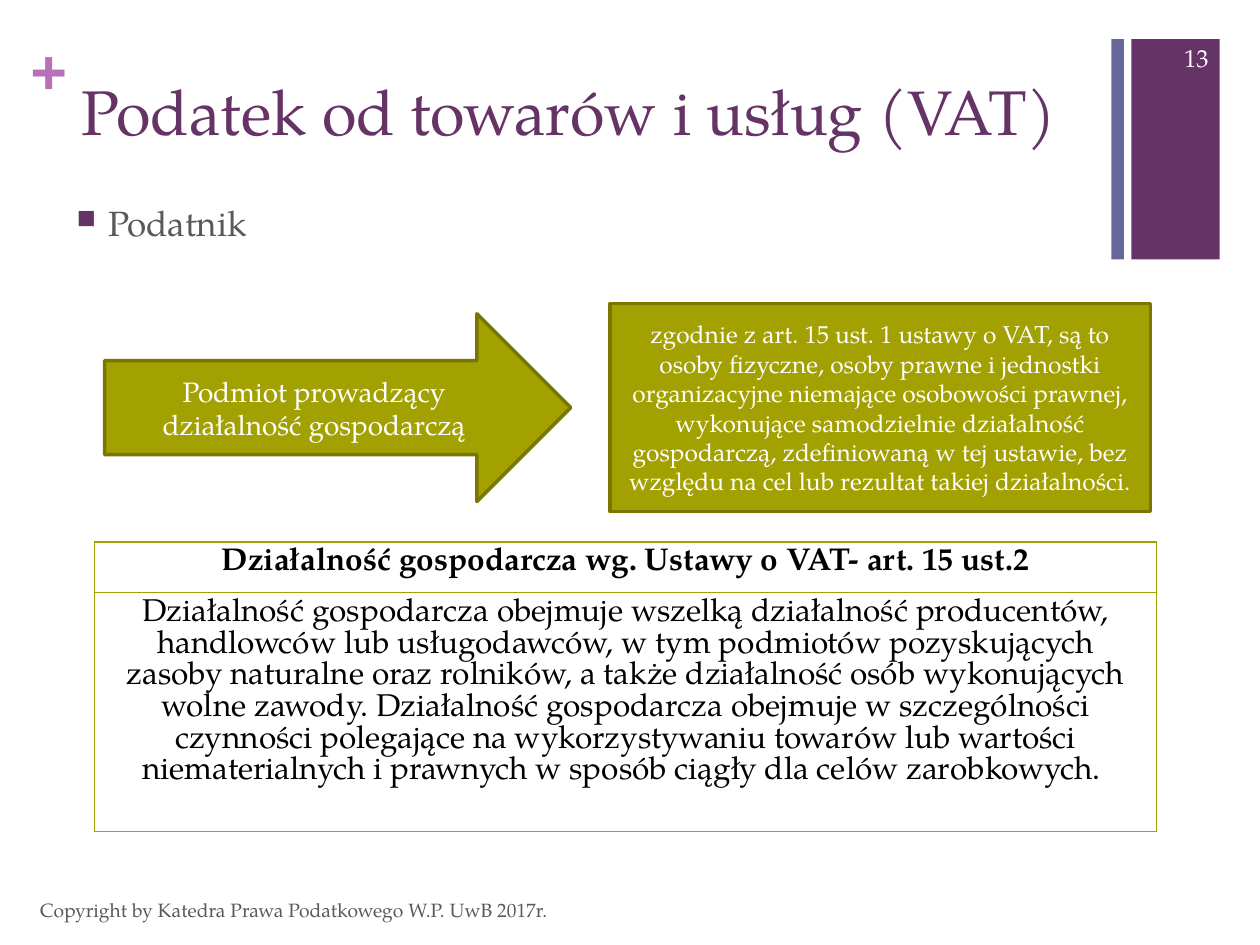
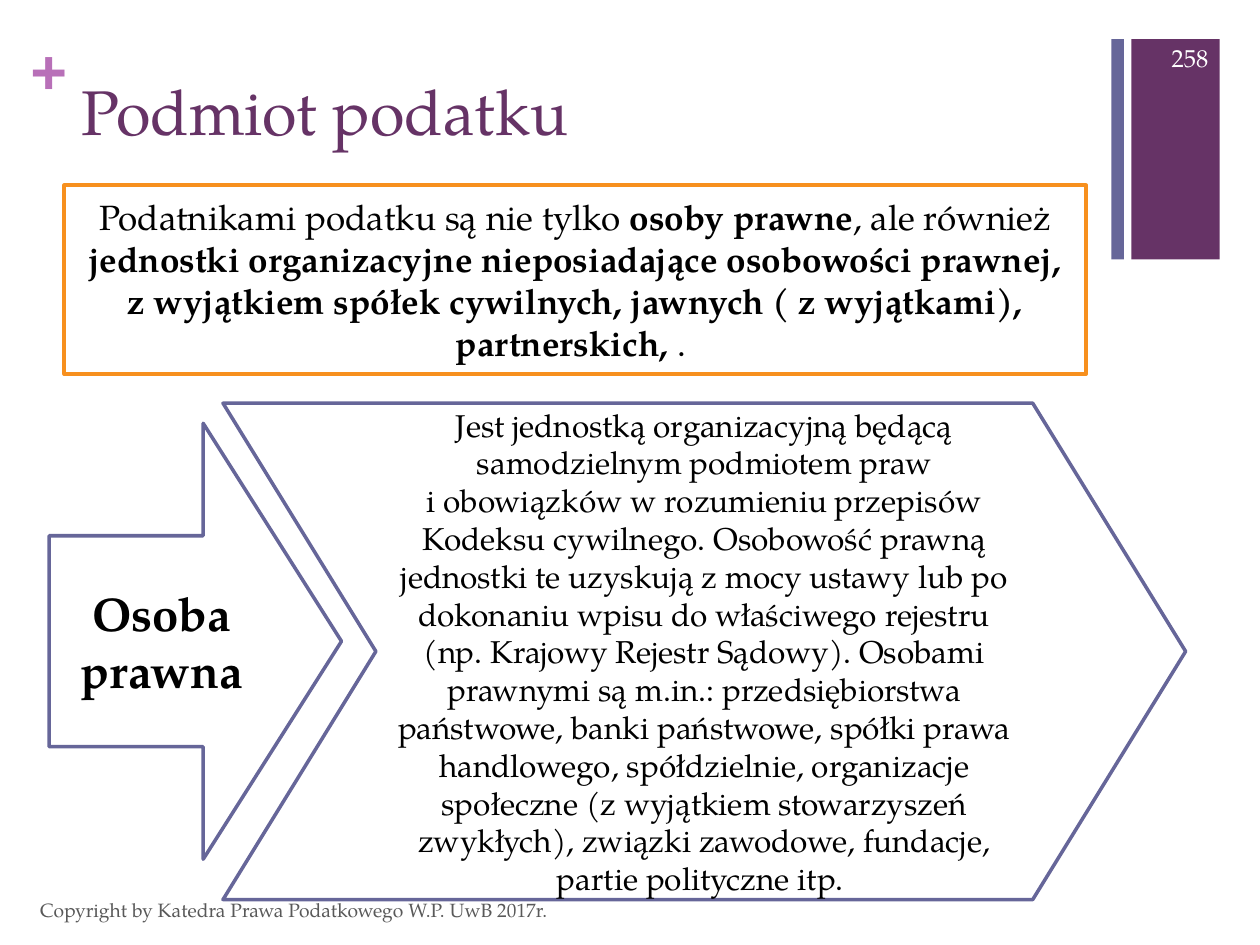
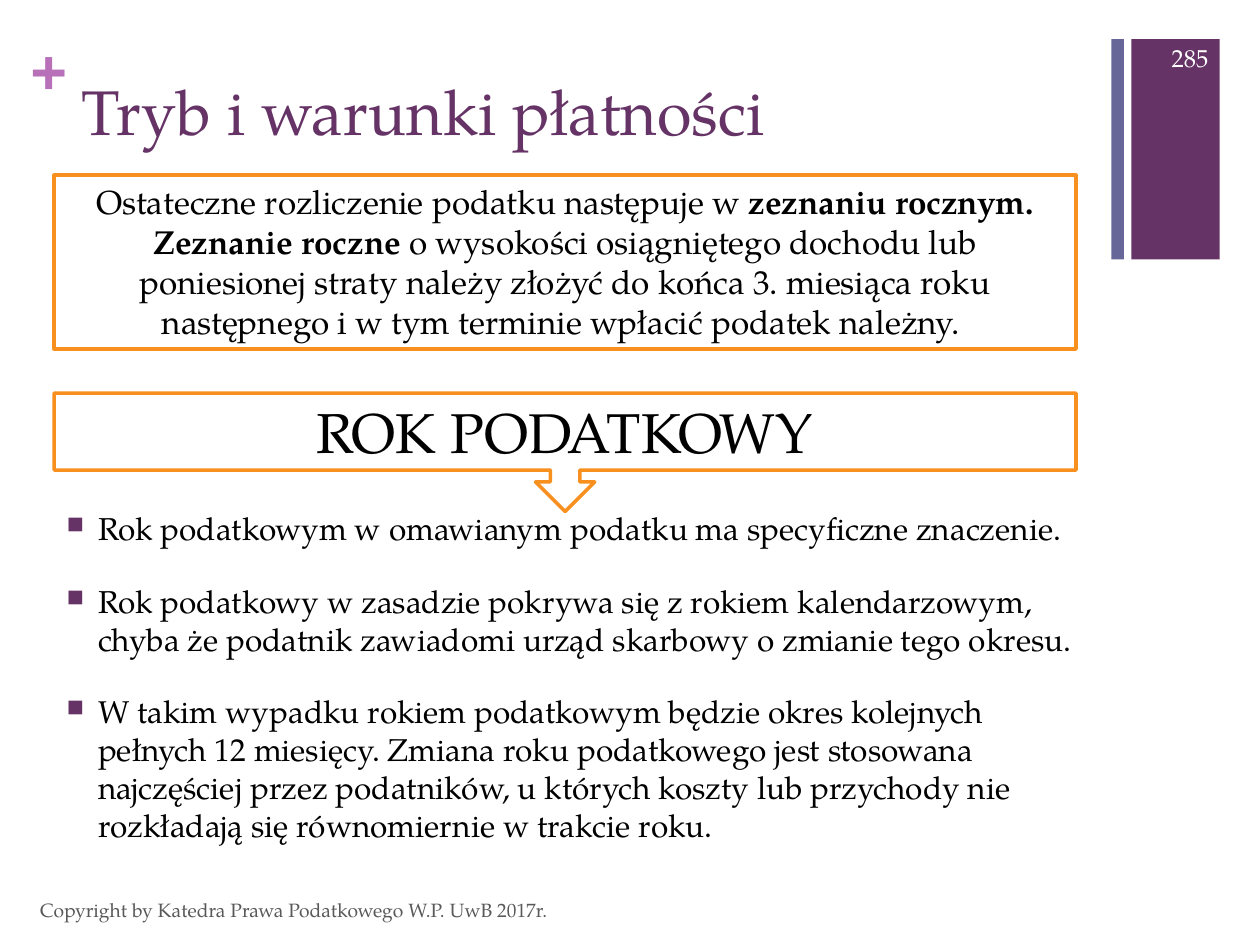
from dataclasses import dataclass
from typing import NamedTuple

from lxml.etree import SubElement
from pptx import Presentation
from pptx.dml.color import RGBColor
from pptx.enum.shapes import MSO_SHAPE
from pptx.enum.text import MSO_ANCHOR, PP_ALIGN
from pptx.oxml.ns import qn
from pptx.util import Pt

# Shared look
PX = 9144  # EMU in one px, 100 px to the inch
NBSP = chr(160)  # typed as ~ in the texts below
FONT = "TeX Gyre Pagella"
PURPLE, SLATE, PINK = "663366", "666699", "B870B8"
OLIVE, DARK_OLIVE, ORANGE = "A3A101", "797701", "F7901E"
WHITE, BLACK, GREY = "FFFFFF", "000000", "595959"
FOOTER = "Copyright by Katedra Prawa Podatkowego W.P. UwB 2017r."


class Box(NamedTuple):
    left: int
    top: int
    width: int
    height: int

    def emu(self) -> list[int]:
        return [n * PX for n in self]


class Run(NamedTuple):
    text: str
    bold: bool = False


@dataclass(frozen=True)
class Style:
    size: int
    color: str = BLACK
    align: PP_ALIGN = PP_ALIGN.LEFT
    anchor: MSO_ANCHOR = MSO_ANCHOR.TOP
    font: str = FONT
    bullet: bool = False


@dataclass(frozen=True)
class Panel:
    kind: MSO_SHAPE
    box: Box
    runs: list[Run]
    size: int
    line: str
    fill: str = WHITE
    color: str = BLACK
    anchor: MSO_ANCHOR = MSO_ANCHOR.MIDDLE
    adj: tuple[float, ...] = ()


TITLE = Style(36, PURPLE)
PLUS = Style(36, PINK, font="Arial")
FOOT = Style(11, GREY, anchor=MSO_ANCHOR.MIDDLE)
NUMBER = Style(14, WHITE, PP_ALIGN.RIGHT, MSO_ANCHOR.MIDDLE)
CELL = Style(18, align=PP_ALIGN.CENTER)


# Drawing helpers
def rgb(color: str) -> RGBColor:
    return RGBColor.from_string(color)


def add_bullet(p) -> None:
    pPr = p._p.get_or_add_pPr()
    pPr.set("marL", str(25 * PX))
    pPr.set("indent", str(-25 * PX))
    p.space_before = Pt(20)
    SubElement(SubElement(pPr, qn("a:buClr")), qn("a:srgbClr"), val=PURPLE)
    SubElement(pPr, qn("a:buSzPct"), val="75000")
    SubElement(pPr, qn("a:buChar"), char="■")


def write(tf, paragraphs: list[list[Run]], style: Style) -> None:
    for i, runs in enumerate(paragraphs):
        p = tf.add_paragraph() if i else tf.paragraphs[0]
        p.alignment = style.align
        if style.bullet:
            add_bullet(p)
        for run in runs:
            r = p.add_run()
            r.text = run.text.replace("~", NBSP)
            r.font.name = style.font
            r.font.size = Pt(style.size)
            r.font.bold = run.bold
            r.font.color.rgb = rgb(style.color)


def add_text(s, box: Box, paragraphs: list[list[Run]], style: Style, inset: bool = True) -> None:
    tf = s.shapes.add_textbox(*box.emu()).text_frame
    tf.word_wrap = True
    tf.vertical_anchor = style.anchor
    if not inset:
        tf.margin_left = tf.margin_right = tf.margin_top = tf.margin_bottom = 0
    write(tf, paragraphs, style)


def add_block(s, kind: MSO_SHAPE, box: Box, fill: str, line: str | None = None):
    sp = s.shapes.add_shape(kind, *box.emu())
    sp.shadow.inherit = False
    sp.fill.solid()
    sp.fill.fore_color.rgb = rgb(fill)
    if line:
        sp.line.color.rgb = rgb(line)
        sp.line.width = Pt(2)
    else:
        sp.line.fill.background()
    return sp


def add_panel(s, panel: Panel) -> None:
    sp = add_block(s, panel.kind, panel.box, panel.fill, panel.line)
    for i, value in enumerate(panel.adj):
        sp.adjustments[i] = value
    tf = sp.text_frame
    tf.word_wrap = True
    tf.vertical_anchor = panel.anchor
    write(tf, [panel.runs], Style(panel.size, panel.color, PP_ALIGN.CENTER))


def add_grid(s, box: Box, heights: list[int], rows: list[Run]) -> None:
    tbl = s.shapes.add_table(len(rows), 1, *box.emu()).table
    tbl.first_row = tbl.horz_banding = False
    for i, (height, run) in enumerate(zip(heights, rows)):
        tbl.rows[i].height = height * PX
        cell = tbl.cell(i, 0)
        tcPr = cell._tc.get_or_add_tcPr()
        for side in ("lnL", "lnR", "lnT", "lnB"):
            ln = SubElement(tcPr, qn(f"a:{side}"), w=str(Pt(1)))
            SubElement(SubElement(ln, qn("a:solidFill")), qn("a:srgbClr"), val=OLIVE)
        cell.fill.solid()
        cell.fill.fore_color.rgb = rgb(WHITE)
        write(cell.text_frame, [[run]], CELL)


def new_slide(prs, title: str, number: int):
    s = prs.slides.add_slide(prs.slide_layouts[6])
    add_block(s, MSO_SHAPE.RECTANGLE, Box(898, 31, 70, 175), PURPLE)
    add_text(s, Box(24, 25, 29, 61), [[Run("+", True)]], PLUS, inset=False)
    add_block(s, MSO_SHAPE.RECTANGLE, Box(882, 31, 10, 175), SLATE)
    add_text(s, Box(55, 53, 826, 122), [[Run(title)]], TITLE)
    add_text(s, Box(22, 702, 670, 40), [[Run(FOOTER)]], FOOT)
    add_text(s, Box(908, 26, 61, 40), [[Run(str(number))]], NUMBER)
    return s


# Slides
def taxpayer_slide(prs) -> None:
    s = new_slide(prs, "Podatek od towarów i usług (VAT)", 13)
    add_text(s, Box(51, 155, 826, 453), [[Run("Podatnik")]], Style(20, GREY, bullet=True))
    add_panel(s, Panel(
        MSO_SHAPE.RIGHT_ARROW, Box(83, 249, 370, 149),
        [Run("Podmiot prowadzący działalność gospodarczą")],
        16, DARK_OLIVE, OLIVE, WHITE))
    add_panel(s, Panel(
        MSO_SHAPE.RECTANGLE, Box(484, 241, 429, 165),
        [Run("zgodnie z~art.~15 ust. 1 ustawy o VAT, są to osoby fizyczne, osoby prawne "
             "i~jednostki organizacyjne niemające osobowości prawnej, wykonujące "
             "samodzielnie działalność gospodarczą, zdefiniowaną w~tej ustawie, bez "
             "względu na cel lub rezultat takiej działalności.")],
        14, DARK_OLIVE, OLIVE, WHITE))
    add_grid(s, Box(75, 430, 843, 220), [31, 189], [
        Run("Działalność gospodarcza wg. Ustawy o VAT- art. 15 ust.2", True),
        Run("Działalność gospodarcza obejmuje wszelką działalność producentów, handlowców "
            "lub usługodawców, w tym podmiotów pozyskujących zasoby naturalne oraz "
            "rolników, a także działalność osób wykonujących wolne zawody. Działalność "
            "gospodarcza obejmuje w szczególności czynności polegające na "
            "wykorzystywaniu towarów lub wartości niematerialnych i prawnych w sposób "
            "ciągły dla celów zarobkowych. "),
    ])


def legal_person_slide(prs) -> None:
    s = new_slide(prs, "Podmiot podatku", 258)
    add_panel(s, Panel(
        MSO_SHAPE.RECTANGLE, Box(51, 147, 811, 150),
        [Run("Podatnikami podatku są nie tylko "),
         Run("osoby prawne", True),
         Run(", ale również "),
         Run("jednostki organizacyjne nieposiadające osobowości prawnej, z~wyjątkiem "
             "spółek cywilnych, jawnych ( z wyjątkami), partnerskich, ", True),
         Run(". ")],
        20, ORANGE))
    add_panel(s, Panel(
        MSO_SHAPE.RIGHT_ARROW, Box(39, 336, 232, 346),
        [Run("Osoba prawna", True)], 27, SLATE, adj=(0.484, 0.473)))
    add_panel(s, Panel(
        MSO_SHAPE.CHEVRON, Box(177, 320, 764, 394),
        [Run("Jest jednostką organizacyjną będącą samodzielnym podmiotem praw "
             "i~obowiązków w~rozumieniu przepisów Kodeksu cywilnego. Osobowość prawną "
             "jednostki te uzyskują z~mocy ustawy lub po dokonaniu wpisu do właściwego "
             "rejestru (np. Krajowy Rejestr Sądowy). Osobami prawnymi są m.in.: "
             "przedsiębiorstwa państwowe, banki państwowe, spółki prawa handlowego, "
             "spółdzielnie, organizacje społeczne (z wyjątkiem stowarzyszeń zwykłych), "
             "związki zawodowe, fundacje, partie polityczne itp. ")],
        18, SLATE, adj=(0.308,)))


def payment_slide(prs) -> None:
    s = new_slide(prs, "Tryb i warunki płatności", 285)
    add_panel(s, Panel(
        MSO_SHAPE.RECTANGLE, Box(43, 139, 811, 138),
        [Run("Ostateczne rozliczenie podatku następuje w"),
         Run("~zeznaniu rocznym. Zeznanie roczne ", True),
         Run("o~wysokości osiągniętego dochodu lub poniesionej straty należy złożyć do "
             "końca 3. miesiąca roku następnego i~w~tym terminie wpłacić podatek "
             "należny. ")],
        19, ORANGE, anchor=MSO_ANCHOR.TOP))
    add_panel(s, Panel(
        MSO_SHAPE.DOWN_ARROW_CALLOUT, Box(43, 312, 811, 94),
        [Run("ROK PODATKOWY")], 32, ORANGE))
    add_text(s, Box(43, 399, 826, 335), [
        [Run("Rok podatkowym w omawianym podatku ma specyficzne znaczenie.")],
        [Run("Rok podatkowy w~zasadzie pokrywa się z~rokiem kalendarzowym, chyba że "
             "podatnik zawiadomi urząd skarbowy o~zmianie tego okresu.")],
        [Run("W takim wypadku rokiem podatkowym będzie okres kolejnych pełnych 12 "
             "miesięcy. Zmiana roku podatkowego jest stosowana najczęściej przez "
             "podatników, u~których koszty lub przychody nie rozkładają się "
             "równomiernie w~trakcie roku.")],
    ], Style(18, bullet=True))


def main() -> None:
    prs = Presentation()
    prs.slide_width, prs.slide_height = 1000 * PX, 750 * PX
    taxpayer_slide(prs)
    legal_person_slide(prs)
    payment_slide(prs)
    prs.save("out.pptx")


if __name__ == "__main__":
    main()
